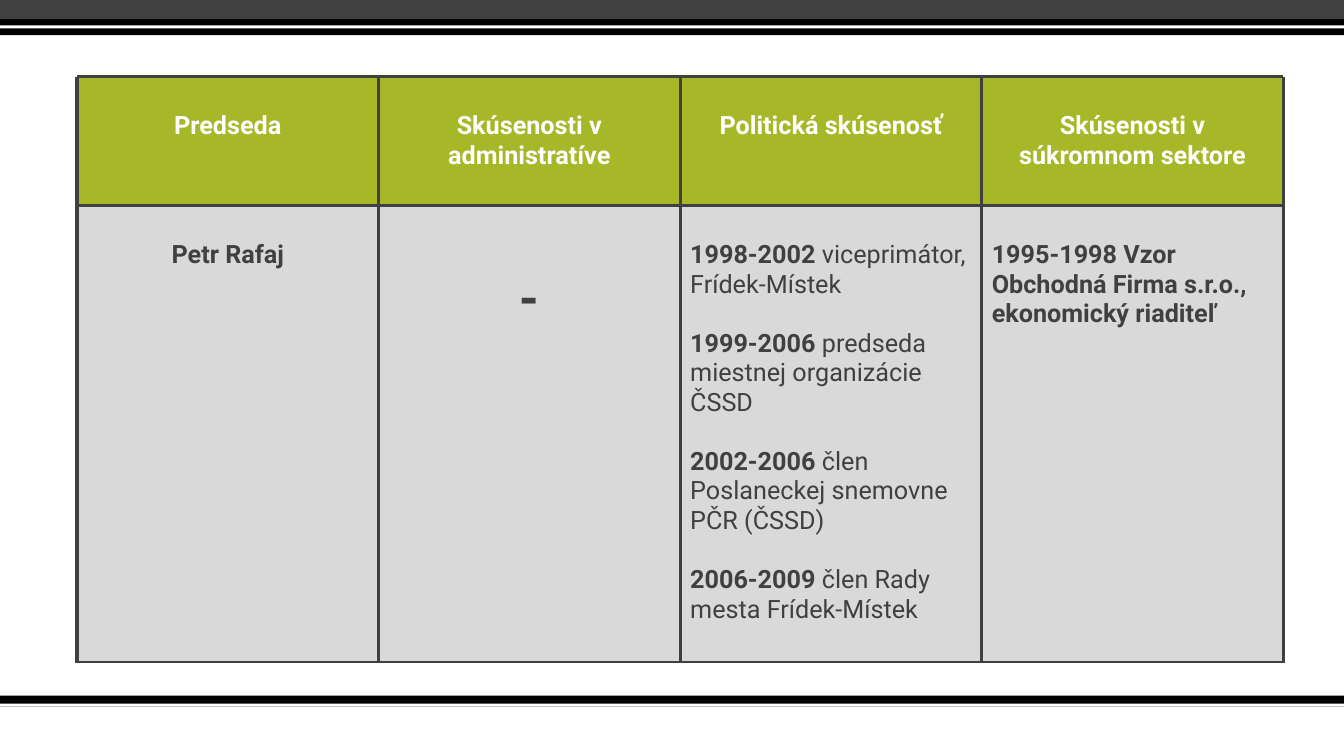
from dataclasses import dataclass

from lxml import etree
from pptx import Presentation
from pptx.dml.color import RGBColor
from pptx.enum import shapes, text
from pptx.oxml import ns
from pptx.util import Cm, Pt

BLACK = RGBColor(0x00, 0x00, 0x00)
WHITE = RGBColor(0xFF, 0xFF, 0xFF)
CHARCOAL = RGBColor(0x40, 0x40, 0x40)
GREEN = RGBColor(0xA6, 0xB7, 0x27)
SILVER = RGBColor(0xD9, 0xD9, 0xD9)

FONT = "Roboto"
PAGE_WIDTH = 33.87
PAGE_HEIGHT = 19.05
TABLE_LEFT = 1.94
TABLE_TOP = 1.93
COLUMN_WIDTH = 7.6
ROW_HEIGHTS = (3.25, 11.5)
RULE_BOTTOM = 16.71
TEXT_SIZE = 18
DASH_SIZE = 36
LINE_SPACING = 1.172
CELL_PADDING = 3.6


@dataclass(frozen=True)
class Band:
    top: float
    height: float
    color: RGBColor


@dataclass(frozen=True)
class Entry:
    bold: str
    plain: str = ""


@dataclass(frozen=True)
class CellContent:
    entries: tuple[Entry, ...]
    fill: RGBColor = SILVER
    color: RGBColor = CHARCOAL
    align: text.PP_ALIGN = text.PP_ALIGN.LEFT
    size: float = TEXT_SIZE


BANDS = (
    Band(17.53, 0.28, BLACK),
    Band(17.73, 0.08, WHITE),
    Band(0, 0.48, CHARCOAL),
    Band(0.48, 0.41, BLACK),
    Band(0.64, 0.08, WHITE),
)

HEADINGS = (
    "Predseda",
    "Skúsenosti v administratíve",
    "Politická skúsenosť",
    "Skúsenosti v súkromnom sektore",
)

HEADER_ROW = tuple(
    CellContent((Entry(heading),), GREEN, WHITE, text.PP_ALIGN.CENTER)
    for heading in HEADINGS
)

CHAIRMAN_ROW = (
    CellContent((Entry("Petr Rafaj"),), align=text.PP_ALIGN.CENTER),
    CellContent((Entry("-"),), align=text.PP_ALIGN.CENTER, size=DASH_SIZE),
    CellContent((
        Entry("1998-2002", " viceprimátor, Frídek-Místek"),
        Entry("1999-2006", " predseda miestnej organizácie ČSSD"),
        Entry("2002-2006", " člen Poslaneckej snemovne PČR (ČSSD)"),
        Entry("2006-2009", " člen Rady mesta Frídek-Místek"),
    )),
    CellContent((Entry("1995-1998 Vzor Obchodná Firma s.r.o., ekonomický riaditeľ"),)),
)


def add_band(page, band: Band) -> None:
    box = page.shapes.add_shape(
        shapes.MSO_SHAPE.RECTANGLE,
        Cm(0), Cm(band.top), Cm(PAGE_WIDTH), Cm(band.height),
    )
    box.shadow.inherit = False
    box.fill.solid()
    box.fill.fore_color.rgb = band.color
    box.line.fill.background()


def add_span(para, words: str, *, size: float, color: RGBColor, bold: bool) -> None:
    span = para.add_run()
    span.text = words
    span.font.name = FONT
    span.font.size = Pt(size)
    span.font.color.rgb = color
    span.font.bold = bold


def set_borders(cell) -> None:
    properties = cell._tc.get_or_add_tcPr()
    for index, side in enumerate(("lnL", "lnR", "lnT", "lnB")):
        border = etree.Element(ns.qn(f"a:{side}"))
        properties.insert(index, border)
        if side in ("lnL", "lnR"):
            etree.SubElement(border, ns.qn("a:noFill"))
            continue
        border.set("w", str(Pt(2)))
        fill = etree.SubElement(border, ns.qn("a:solidFill"))
        etree.SubElement(fill, ns.qn("a:srgbClr"), val=str(CHARCOAL))


def fill_cell(cell, content: CellContent) -> None:
    line_height = content.size * LINE_SPACING
    cell.margin_top = Pt(CELL_PADDING + line_height)
    cell.fill.solid()
    cell.fill.fore_color.rgb = content.fill
    set_borders(cell)
    for index, entry in enumerate(content.entries):
        frame = cell.text_frame
        para = frame.add_paragraph() if index else frame.paragraphs[0]
        para.alignment = content.align
        if index:
            para.space_before = Pt(line_height)
        add_span(para, entry.bold, size=content.size, color=content.color, bold=True)
        if entry.plain:
            add_span(para, entry.plain, size=content.size, color=content.color, bold=False)


def add_experience_table(page) -> None:
    rows = (HEADER_ROW, CHAIRMAN_ROW)
    table = page.shapes.add_table(
        len(rows), len(HEADINGS), Cm(TABLE_LEFT), Cm(TABLE_TOP),
        Cm(COLUMN_WIDTH * len(HEADINGS)), Cm(sum(ROW_HEIGHTS)),
    ).table
    for column in table.columns:
        column.width = Cm(COLUMN_WIDTH)
    for row_index, contents in enumerate(rows):
        table.rows[row_index].height = Cm(ROW_HEIGHTS[row_index])
        for column_index, content in enumerate(contents):
            fill_cell(table.cell(row_index, column_index), content)


def add_column_rule(page, left: float) -> None:
    rule = page.shapes.add_connector(
        shapes.MSO_CONNECTOR.STRAIGHT,
        Cm(left), Cm(TABLE_TOP), Cm(left), Cm(RULE_BOTTOM),
    )
    rule.line.color.rgb = CHARCOAL
    rule.line.width = Pt(2.25)
    etree.SubElement(rule._element.spPr, ns.qn("a:effectLst"))


def main() -> None:
    deck = Presentation()
    deck.slide_width = Cm(PAGE_WIDTH)
    deck.slide_height = Cm(PAGE_HEIGHT)
    page = deck.slides.add_slide(deck.slide_layouts[6])
    for band in BANDS:
        add_band(page, band)
    add_experience_table(page)
    for index in range(len(HEADINGS) + 1):
        add_column_rule(page, TABLE_LEFT + index * COLUMN_WIDTH)
    deck.save("out.pptx")


if __name__ == "__main__":
    main()
